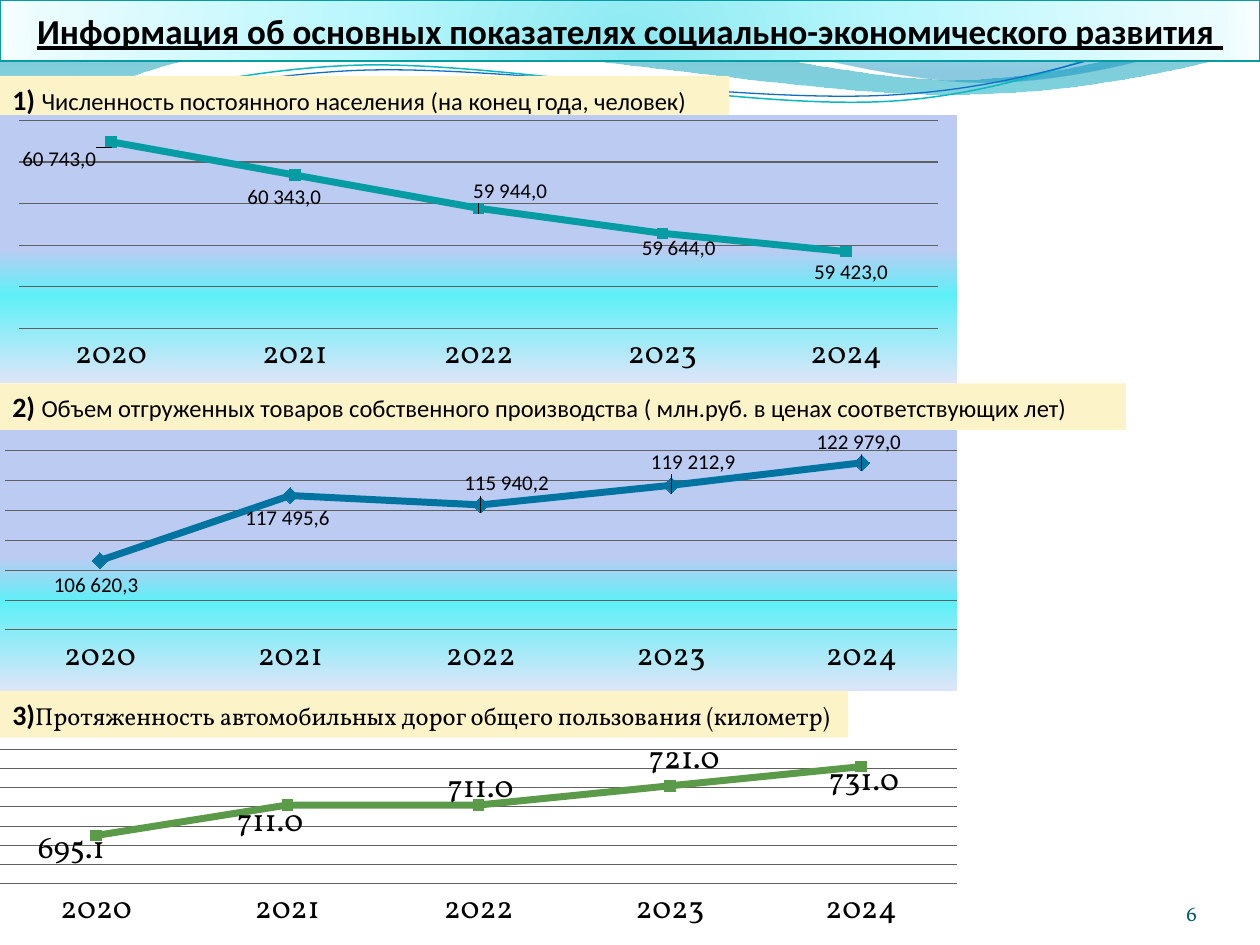
from lxml.etree import SubElement
from pptx import Presentation
from pptx.chart.data import CategoryChartData
from pptx.dml.color import RGBColor
from pptx.enum.chart import XL_CHART_TYPE, XL_LABEL_POSITION, XL_MARKER_STYLE as MARK, XL_TICK_LABEL_POSITION, XL_TICK_MARK
from pptx.enum.shapes import MSO_SHAPE
from pptx.enum.text import MSO_ANCHOR, PP_ALIGN
from pptx.oxml import parse_xml
from pptx.oxml.ns import nsdecls, qn
from pptx.util import Cm, Pt

TITLE = "Информация об основных показателях социально-экономического развития "
YEARS = ["2020", "2021", "2022", "2023", "2024"]
BACKDROP = [(0, "BBCBF2", 100), (50, "BBCBF2", 100), (67, "5EF0F7", 100), (100, "DEE5F8", 100)]
TITLE_STOPS = [(0, "8BE9F1", 100), (43, "B9F7FD", 100), (93, "EAFCFE", 100), (100, "F8FEFF", 100)]
CHART_WIDTH = 19.3

# Number, text, text font, top and width in cm
HEADINGS = [
    ("1) ", "Численность постоянного населения (на конец года, человек)", "Calibri", 1.53, 14.7),
    ("2) ", "Объем отгруженных товаров собственного производства ( млн.руб. в ценах соответствующих лет)",
     "Calibri", 7.73, 22.7),
    ("3)", "Протяженность автомобильных дорог общего пользования (километр)", "Vollkorn", 13.93, 17.1),
]

# "shifts" are the label centres in cm from their points, "below" is the usual drop of a label
POPULATION = dict(
    values=[60743, 60343, 59944, 59644, 59423], scale=(58500, 61000, 500), top=2.32, height=5.41,
    color="069CA3", marker=(MARK.SQUARE, 6), plot=(0.02, 0.02, 0.96, 0.776), backdrop=True, spaced=True, below=0.47,
    shifts=[(-1.05, 0.36), (-0.22, 0.46), (0.63, -0.34), (0.32, 0.32), (0.1, 0.42)])
SHIPMENTS = dict(
    values=[106620.3, 117495.6, 115940.2, 119212.9, 122979], scale=(95000, 125000, 5000), top=8.52, height=5.41,
    color="0074A1", marker=(MARK.DIAMOND, 9), plot=(0.005, 0.105, 0.995, 0.668), backdrop=True, spaced=True, below=0.52,
    shifts=[(-0.08, 0.5), (-0.06, 0.46), (0.52, -0.42), (0.44, -0.46), (-0.06, -0.4)])
ROADS = dict(
    values=[695.1, 711, 711, 721, 731], scale=(670, 740, 10), top=14.72, height=4.32,
    color="5A9A48", marker=(MARK.SQUARE, 6), plot=(0, 0.09, 1, 0.626), backdrop=False, spaced=False, below=0.62,
    shifts=[(-0.5, 0.26), (-0.34, 0.34), (0.04, -0.34), (0.28, -0.54), (0.06, 0.28)])

# Outlines in cm: pairs are straight steps, sixes are cubic curves
WAVES = [
    ([(0, 0), (11.18, -0.03), (12.09, 0.43, 16.87, 1.6, 19.25, 1.6), (21.67, 1.6, 24.33, 0.66, 25.4, 0.23),
      (25.43, 0.91), (24.97, 1.12, 22.1, 1.93, 18.95, 1.9), (15.8, 1.9, 9.7, 0.71, 6.53, 0.86),
      (3.28, 0.91, 1.17, 2.11, -0.03, 2.87)], [(0, "0074A1", 45), (100, "00C6CF", 55)]),
    ([(12.17, -0.03), (12.93, 0.28, 17.32, 1.57, 19.53, 1.65), (21.74, 1.75, 24.41, 0.81, 25.4, 0.53),
      (25.4, 0)], [(0, "00A1A9", 30), (80, "008BBF", 45)]),
]
STRANDS = [
    ([(0, 2.82), (1.22, 2.36, 4.01, 1.45, 7.04, 1.32), (10.03, 1.19, 15.06, 2.26, 18.11, 2.03),
      (21.16, 1.8, 23.83, 0.38, 25.35, -0.05)], "0AB8BF", 0.85),
    ([(0, 2.64), (1.19, 2.44, 4.17, 1.55, 7.19, 1.42), (10.24, 1.3, 15.16, 2.13, 18.21, 1.9),
      (21.23, 1.7, 23.9, 0.53, 25.4, 0.15)], "0F6FC6", 0.75),
]


def rgb(value):
    return RGBColor.from_string(value)


def style(font, name, size, color="000000", bold=False):
    font.name, font.size, font.bold = name, Pt(size), bold
    font.color.rgb = rgb(color)


def gradient(stops, direction='<a:lin ang="5400000" scaled="0"/>'):
    marks = "".join(f'<a:gs pos="{pos * 1000}"><a:srgbClr val="{color}"><a:alpha val="{alpha * 1000}"/>'
                    f'</a:srgbClr></a:gs>' for pos, color, alpha in stops)
    return parse_xml(f'<a:gradFill {nsdecls("a")} rotWithShape="1"><a:gsLst>{marks}</a:gsLst>{direction}</a:gradFill>')


def fill_gradient(shape, *args):
    shape.fill.background()
    properties = shape._element.spPr
    properties.replace(properties.find(qn("a:noFill")), gradient(*args))


def add_outline(slide, steps, close):
    """Draw every point as a straight step, then join each curve's three steps into one."""
    points = [[(round(x * 100), round(y * 100)) for x, y in zip(step[::2], step[1::2])] for step in steps]
    builder = slide.shapes.build_freeform(*points[0][0], scale=Cm(0.01))
    builder.add_line_segments([point for step in points[1:] for point in step], close=close)
    outline = builder.convert_to_shape()
    outline.shadow.inherit = False
    segments = iter(list(outline._element.iter(qn("a:lnTo"))))
    for step in points[1:]:
        parts = [next(segments) for _ in step]
        if len(parts) == 3:
            curve = parse_xml(f'<a:cubicBezTo {nsdecls("a")}/>')
            parts[0].addprevious(curve)
            for part in parts:
                curve.append(part[0])
                part.getparent().remove(part)
    return outline


def add_waves(slide):
    for steps, stops in WAVES:
        wave = add_outline(slide, steps, True)
        fill_gradient(wave, stops)
        wave.line.fill.background()
    for steps, color, width in STRANDS:
        strand = add_outline(slide, steps, False)
        strand.fill.background()
        strand.line.color.rgb, strand.line.width = rgb(color), Pt(width)


def format_title(slide):
    title = slide.shapes.title
    slide.shapes._spTree.append(title._element)
    title.left, title.top, title.width, title.height = Cm(0), Cm(0), Cm(25.4), Cm(1.23)
    title._element.spPr.append(parse_xml(f'<a:prstGeom {nsdecls("a")} prst="roundRect"><a:avLst/></a:prstGeom>'))
    fill_gradient(title, TITLE_STOPS, '<a:path path="circle"><a:fillToRect l="50000" t="130000" r="50000" '
                  'b="-30000"/></a:path>')
    title.line.color.rgb, title.line.width = rgb("069CA3"), Pt(0.75)
    title.shadow.inherit = False
    frame = title.text_frame
    frame.text = TITLE
    frame.vertical_anchor = MSO_ANCHOR.MIDDLE
    frame.paragraphs[0].alignment = PP_ALIGN.CENTER
    font = frame.paragraphs[0].runs[0].font
    style(font, "Calibri", 20, bold=True)
    font.underline = True


def add_heading(slide, number, text, text_font, top, width):
    band = slide.shapes.add_shape(MSO_SHAPE.RECTANGLE, Cm(0), Cm(top), Cm(width), Cm(0.94))
    band.shadow.inherit = False
    band.fill.solid()
    band.fill.fore_color.rgb = rgb("FDF3C9")
    band.line.fill.background()
    band.text_frame.vertical_anchor = MSO_ANCHOR.TOP
    paragraph = band.text_frame.paragraphs[0]
    paragraph.alignment = PP_ALIGN.JUSTIFY
    for part, name, size, bold in ((number, "Calibri", 16, True), (text, text_font, 14, False)):
        run = paragraph.add_run()
        run.text = part
        style(run.font, name, size, bold=bold)


def manual_layout(**settings):
    layout = parse_xml(f'<c:layout {nsdecls("c")}><c:manualLayout/></c:layout>')
    for key, value in settings.items():
        SubElement(layout[0], qn(f"c:{key}")).set("val", str(value))
    return layout


def add_line_chart(slide, values, scale, top, height, color, marker, plot, backdrop, spaced, below, shifts):
    data = CategoryChartData(number_format="#,##0.0")
    data.categories = YEARS
    data.add_series("Series 1", values)
    chart = slide.shapes.add_chart(XL_CHART_TYPE.LINE_MARKERS, Cm(0), Cm(top), Cm(CHART_WIDTH), Cm(height), data).chart
    chart.has_legend = chart.has_title = False
    style(chart.font, "Vollkorn", 18)
    if backdrop:
        area = parse_xml(f'<c:spPr {nsdecls("c", "a")}><a:ln><a:noFill/></a:ln></c:spPr>')
        area.insert(0, gradient(BACKDROP))
        chart._chartSpace.find(qn("c:chart")).addnext(area)
    plot_area = chart._chartSpace.chart.plotArea
    for old in plot_area.findall(qn("c:layout")):
        plot_area.remove(old)
    x, y, w, h = plot
    plot_area.insert(0, manual_layout(layoutTarget="inner", xMode="edge", yMode="edge", x=x, y=y, w=w, h=h))

    axis = chart.value_axis
    axis.minimum_scale, axis.maximum_scale, axis.major_unit = scale
    axis.tick_label_position = XL_TICK_LABEL_POSITION.NONE
    axis.major_tick_mark = chart.category_axis.major_tick_mark = XL_TICK_MARK.NONE
    axis.format.line.fill.background()
    for line in (axis.major_gridlines.format.line, chart.category_axis.format.line):
        line.color.rgb, line.width = rgb("606060"), Pt(0.6)

    chart.plots[0].vary_by_categories = False
    series = chart.plots[0].series[0]
    series.smooth = False
    series.format.line.color.rgb, series.format.line.width = rgb(color), Pt(4)
    series.marker.style, series.marker.size = marker
    series.marker.format.fill.solid()
    series.marker.format.fill.fore_color.rgb = rgb(color)
    series.marker.format.line.color.rgb = rgb(color)
    labels = series.data_labels
    labels.show_value = True
    labels.number_format, labels.number_format_is_linked = "#,##0.0", False
    style(labels.font, *(("Arial", 12) if spaced else ("Vollkorn", 18)))
    for point, (value, (dx, dy)) in enumerate(zip(values, shifts)):
        label = series.points[point].data_label
        if spaced:
            label.text_frame.text = f"{value:,.1f}".replace(",", " ").replace(".", ",")
            style(label.text_frame.paragraphs[0].runs[0].font, "Calibri", 12)
        else:
            style(label.font, "Vollkorn", 18)
        label.position = XL_LABEL_POSITION.BELOW
        label._dLbl.find(qn("c:idx")).addnext(
            manual_layout(x=round(dx / CHART_WIDTH, 3), y=round((dy - below) / height, 3)))
    labels._element.append(parse_xml(
        f'<c:extLst {nsdecls("c")}><c:ext uri="{{CE6537A1-D6FC-4f65-9D91-7224C49458BB}}" '
        'xmlns:c15="http://schemas.microsoft.com/office/drawing/2012/chart">'
        '<c15:showLeaderLines val="0"/></c:ext></c:extLst>'))


def add_page_number(slide):
    frame = slide.shapes.add_textbox(Cm(22.02), Cm(17.65), Cm(2.11), Cm(1.02)).text_frame
    frame.word_wrap = True
    frame.margin_left = frame.margin_right = frame.margin_top = frame.margin_bottom = 0
    frame.vertical_anchor = MSO_ANCHOR.BOTTOM
    frame.text = "6"
    frame.paragraphs[0].alignment = PP_ALIGN.RIGHT
    style(frame.paragraphs[0].runs[0].font, "Vollkorn", 12, "045D75")


def main():
    deck = Presentation()
    deck.slide_width, deck.slide_height = Cm(25.4), Cm(19.05)
    slide = deck.slides.add_slide(deck.slide_layouts[5])
    add_waves(slide)
    add_line_chart(slide, **SHIPMENTS)
    format_title(slide)
    for heading in HEADINGS:
        add_heading(slide, *heading)
    add_line_chart(slide, **POPULATION)
    add_line_chart(slide, **ROADS)
    add_page_number(slide)
    deck.save("out.pptx")


if __name__ == "__main__":
    main()
